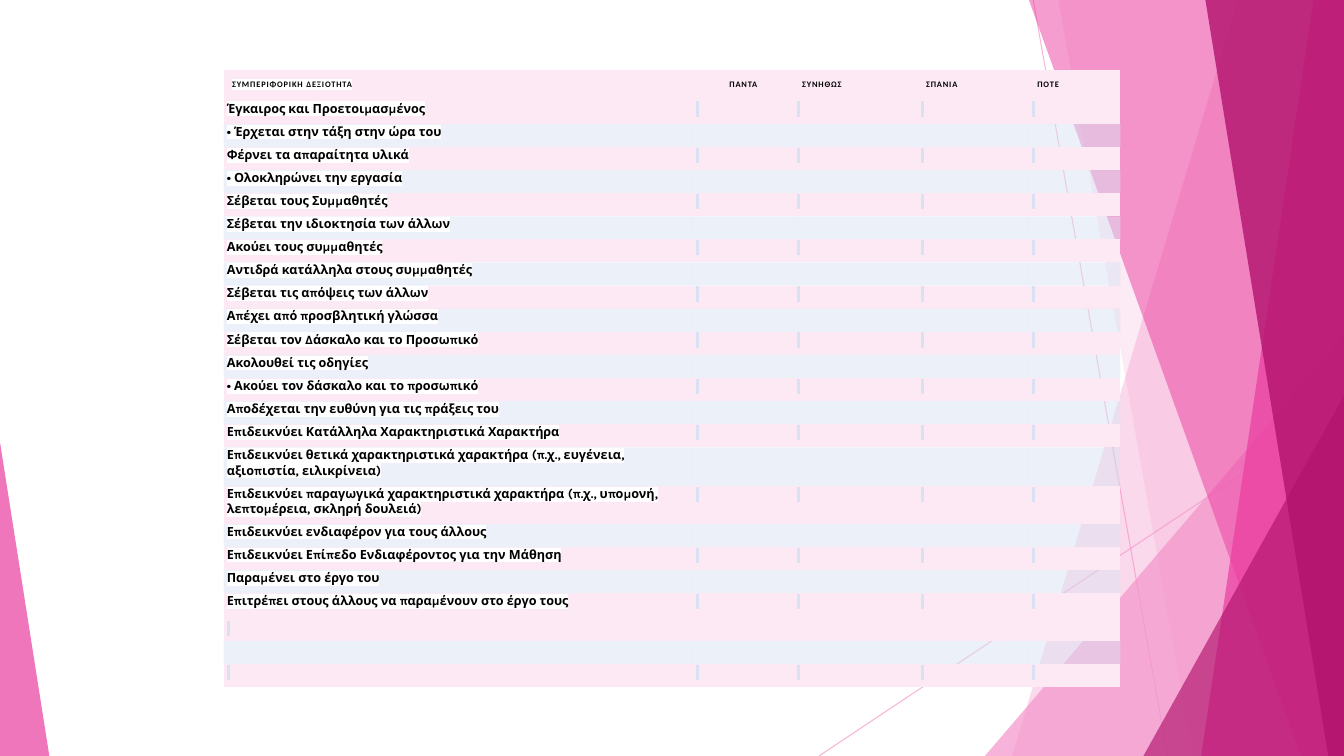
from dataclasses import dataclass

from lxml.etree import SubElement
from pptx import Presentation
from pptx.dml.color import RGBColor
from pptx.enum.shapes import MSO_CONNECTOR as Connector, MSO_SHAPE as Shape
from pptx.enum.text import MSO_ANCHOR as Anchor, PP_ALIGN as Align
from pptx.oxml.ns import qn
from pptx.util import Emu, Pt


@dataclass(frozen=True)
class Theme:
    light: str = "F496CB"
    bright: str = "EB3D9F"
    deep: str = "B2136D"
    row_pink: str = "FDE9F4"
    row_blue: str = "DAE3F3"
    mark: str = "D9E2F3"
    paper: str = "FFFFFF"
    ink: str = "000000"
    heading_font: str = "Calibri"
    body_font: str = "Karla"
    heading_size: float = 6
    body_size: float = 9


@dataclass(frozen=True)
class Ray:
    start: tuple[int, int]
    end: tuple[int, int]


@dataclass(frozen=True)
class Facet:
    """Band reaching the right edge, with a slanted left side."""
    top_x: int
    bottom_x: int
    color: str
    opacity: int


@dataclass(frozen=True)
class Triangle:
    left: int
    top: int
    width: int
    height: int
    apex: int
    color: str
    opacity: int


@dataclass(frozen=True)
class Writing:
    text: str
    font: str
    size: float
    highlight: str | None = None
    heading: bool = False
    align: Align = Align.LEFT


THEME = Theme()
WIDTH, HEIGHT = 1280, 720

RAYS = [Ray((984, 0), (1112, 720)), Ray((1280, 387), (780, 720))]
DECORATION = [
    Facet(1179, 964, THEME.light, 36),
    Facet(1008, 1136, THEME.light, 20),
    Triangle(938, 320, 342, 400, 1, THEME.light, 72),
    Facet(980, 1239, THEME.bright, 50),
    Facet(1251, 1144, THEME.bright, 70),
    Facet(1148, 1265, THEME.deep, 80),
    Triangle(1089, 377, 191, 343, 1, THEME.deep, 66),
    Triangle(0, 421, 47, 299, 0, THEME.bright, 70),
]

TABLE_LEFT, TABLE_TOP = 213, 67
COLUMN_WIDTHS = [447, 96, 118, 106, 87]
HEADER_HEIGHT, ROW_HEIGHT = 29, 22
TALL_ROWS = {16: 37, 17: 36, 21: 42}
LAST_SKILL_ROW = 21
HEADINGS = ["ΣΥΜΠΕΡΙΦΟΡΙΚΉ ΔΕΞΙΌΤΗΤΑ", "ΠΆΝΤΑ", "ΣΥΝΉΘΩΣ", "ΣΠΆΝΙΑ", "ΠΟΤΈ"]
SKILLS = [
    "Έγκαιρος και Προετοιμασμένος",
    "• Έρχεται στην τάξη στην ώρα του",
    "Φέρνει τα απαραίτητα υλικά",
    "• Ολοκληρώνει την εργασία",
    "Σέβεται τους Συμμαθητές",
    "Σέβεται την ιδιοκτησία των άλλων",
    "Ακούει τους συμμαθητές",
    "Αντιδρά κατάλληλα στους συμμαθητές",
    "Σέβεται τις απόψεις των άλλων",
    "Απέχει από προσβλητική γλώσσα",
    "Σέβεται τον Δάσκαλο και το Προσωπικό",
    "Ακολουθεί τις οδηγίες",
    "• Ακούει τον δάσκαλο και το προσωπικό",
    "Αποδέχεται την ευθύνη για τις πράξεις του",
    "Επιδεικνύει Κατάλληλα Χαρακτηριστικά Χαρακτήρα",
    "Επιδεικνύει θετικά χαρακτηριστικά χαρακτήρα (π.χ., ευγένεια, αξιοπιστία, ειλικρίνεια)",
    "Επιδεικνύει παραγωγικά χαρακτηριστικά χαρακτήρα (π.χ., υπομονή, λεπτομέρεια, σκληρή δουλειά)",
    "Επιδεικνύει ενδιαφέρον για τους άλλους",
    "Επιδεικνύει Επίπεδο Ενδιαφέροντος για την Μάθηση",
    "Παραμένει στο έργο του",
    "Επιτρέπει στους άλλους να παραμένουν στο έργο τους",
]
MARK = Writing(" ", THEME.heading_font, THEME.body_size, THEME.mark)
NO_STYLE = "{2D5ABB26-0587-4C30-8999-92F81FD0307C}"


def px(length: int) -> Emu:
    return Emu(length * 9525)


def rgb(color: str) -> RGBColor:
    return RGBColor.from_string(color)


def set_opacity(element, percent: int) -> None:
    for color in element.iter(qn("a:srgbClr")):
        SubElement(color, qn("a:alpha"), val=str(percent * 1000))


# Background decoration
def draw_ray(slide, ray: Ray) -> None:
    line = slide.shapes.add_connector(
        Connector.STRAIGHT, *map(px, ray.start + ray.end))
    line.line.color.rgb = rgb(THEME.light)
    line.line.width = Pt(0.75)
    set_opacity(line.element, 70)
    SubElement(line.element.spPr, qn("a:effectLst"))


def draw_decoration(slide, part: Facet | Triangle) -> None:
    if isinstance(part, Facet):
        builder = slide.shapes.build_freeform(part.top_x, 0, scale=px(1))
        builder.add_line_segments(
            [(WIDTH, 0), (WIDTH, HEIGHT), (part.bottom_x, HEIGHT)], close=True)
        shape = builder.convert_to_shape()
    else:
        shape = slide.shapes.add_shape(
            Shape.ISOSCELES_TRIANGLE, px(part.left), px(part.top),
            px(part.width), px(part.height))
        shape.adjustments[0] = part.apex
    shape.shadow.inherit = False
    shape.fill.solid()
    shape.fill.fore_color.rgb = rgb(part.color)
    set_opacity(shape.element, part.opacity)
    shape.line.fill.background()


# Table of skills
def write(paragraph, writing: Writing) -> None:
    paragraph.alignment = writing.align
    paragraph.line_spacing = 1.05
    paragraph.space_after = Pt(8)
    font = paragraph.font
    font.name, font.size, font.bold = writing.font, Pt(writing.size), True
    font.color.rgb = rgb(THEME.ink)
    if not writing.text:
        SubElement(paragraph._p, qn("a:endParaRPr"), sz=str(int(writing.size * 100)))
        return
    run = paragraph.add_run()
    run.text = writing.text
    properties = run._r.get_or_add_rPr()
    if writing.heading:
        properties.set("cap", "all")
        properties.set("spc", "60")
    if writing.highlight:
        highlight = SubElement(properties, qn("a:highlight"))
        SubElement(highlight, qn("a:srgbClr"), val=writing.highlight)


def cell_writings(row: int, column: int) -> list[Writing]:
    if row == 0:
        return [Writing(HEADINGS[column], THEME.heading_font, THEME.heading_size,
                        None if column else THEME.paper, True,
                        Align.CENTER if column == 1 else Align.LEFT)]
    if column == 0 and row <= LAST_SKILL_ROW:
        skill = Writing(SKILLS[row - 1], THEME.body_font, THEME.body_size, THEME.paper)
        return [skill, MARK] if row == LAST_SKILL_ROW else [skill]
    if row % 2:
        return [MARK]
    return [Writing("", THEME.heading_font, THEME.body_size)]


def fill_cell(cell, row: int, column: int) -> None:
    blue = row > 0 and row % 2 == 0
    cell.fill.solid()
    cell.fill.fore_color.rgb = rgb(THEME.row_blue if blue else THEME.row_pink)
    if blue:
        set_opacity(cell._tc, 50)
    cell.vertical_anchor = Anchor.TOP
    insets = (3, 0, 3, 5) if row else (8, 8, 8, 8)
    (cell.margin_left, cell.margin_top,
     cell.margin_right, cell.margin_bottom) = map(px, insets)
    frame = cell.text_frame
    for index, writing in enumerate(cell_writings(row, column)):
        write(frame.add_paragraph() if index else frame.paragraphs[0], writing)


def draw_table(slide) -> None:
    heights = [HEADER_HEIGHT] + [
        TALL_ROWS.get(row, ROW_HEIGHT) for row in range(1, LAST_SKILL_ROW + 3)]
    table = slide.shapes.add_table(
        len(heights), len(COLUMN_WIDTHS), px(TABLE_LEFT), px(TABLE_TOP),
        px(sum(COLUMN_WIDTHS)), px(sum(heights))).table
    table.first_row = table.horz_banding = False
    table._tbl.tblPr.find(qn("a:tableStyleId")).text = NO_STYLE
    for column, width in enumerate(COLUMN_WIDTHS):
        table.columns[column].width = px(width)
    for row, height in enumerate(heights):
        table.rows[row].height = px(height)
        for column in range(len(COLUMN_WIDTHS)):
            fill_cell(table.cell(row, column), row, column)


def main() -> None:
    presentation = Presentation()
    presentation.slide_width, presentation.slide_height = px(WIDTH), px(HEIGHT)
    slide = presentation.slides.add_slide(presentation.slide_layouts[6])
    for ray in RAYS:
        draw_ray(slide, ray)
    for part in DECORATION:
        draw_decoration(slide, part)
    draw_table(slide)
    presentation.save("out.pptx")


if __name__ == "__main__":
    main()
